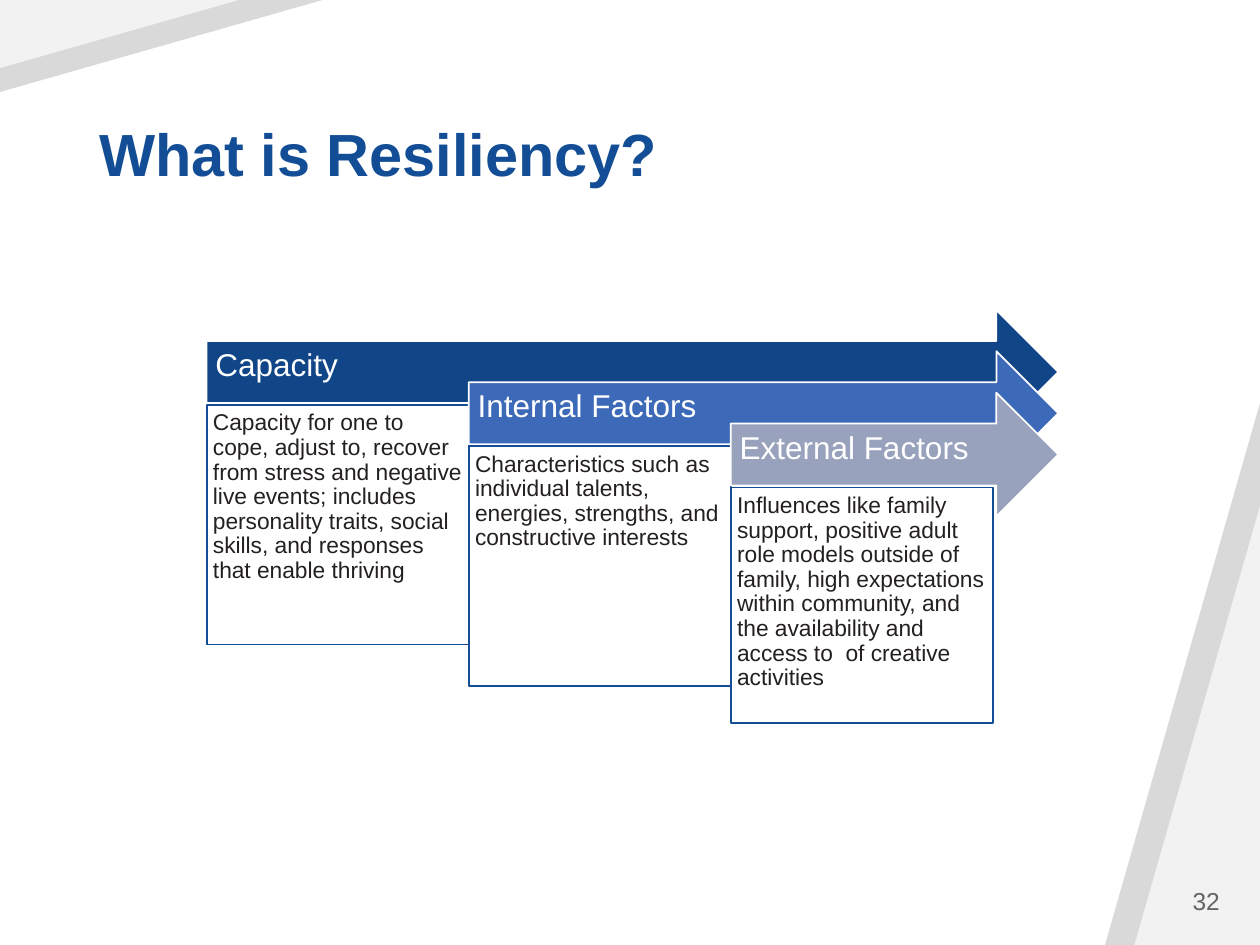
import pptx
import pptx.util
import pptx.dml.color
import pptx.enum.shapes
import pptx.enum.text

RGB = pptx.dml.color.RGBColor
KIND = pptx.enum.shapes.MSO_SHAPE
ALIGN = pptx.enum.text.PP_ALIGN
ANCHOR = pptx.enum.text.MSO_ANCHOR

WHITE = RGB(0xFF, 0xFF, 0xFF)
PALE = RGB(0xF2, 0xF2, 0xF2)
SILVER = RGB(0xD9, 0xD9, 0xD9)
GREY = RGB(0x64, 0x64, 0x64)
INK = RGB(0x24, 0x20, 0x21)
BLUE = RGB(0x12, 0x4D, 0x95)
NAVY = RGB(0x10, 0x46, 0x87)
ROYAL = RGB(0x3D, 0x69, 0xB9)
MIST = RGB(0x98, 0xA2, 0xBD)

WIDTH = pptx.util.Inches(10)
HEIGHT = pptx.util.Inches(7.5)
COL = WIDTH / 100
ROW = HEIGHT / 100

STEPS = [
    ("Capacity", NAVY,
     "Capacity for one to cope, adjust to, recover from stress and negative "
     "live events; includes personality traits, social skills, and responses "
     "that enable thriving"),
    ("Internal Factors", ROYAL,
     "Characteristics such as individual talents, energies, strengths, and "
     "constructive interests"),
    ("External Factors", MIST,
     "Influences like family support, positive adult role models outside of "
     "family, high expectations within community, and the availability and "
     "access to  of creative activities"),
]


def grid(left, top, wide, high):
    return [round(n) for n in (left * COL, top * ROW, wide * COL, high * ROW)]


def write(shape, text, size=13, color=INK, bold=False, align=ALIGN.LEFT,
          anchor=ANCHOR.TOP, space=0.9, inset=(0.1, 0.05, 0.1, 0.05)):
    frame = shape.text_frame
    frame.word_wrap = True
    frame.vertical_anchor = anchor
    (frame.margin_left, frame.margin_top,
     frame.margin_right, frame.margin_bottom) = map(pptx.util.Inches, inset)
    line = frame.paragraphs[0]
    line.alignment = align
    line.line_spacing = space
    run = line.add_run()
    run.text = text
    run.font.name = "Arial"
    run.font.size = pptx.util.Pt(size)
    run.font.bold = bold
    run.font.color.rgb = color


def draw(slide, kind, box, fill, edge=None):
    shape = slide.shapes.add_shape(kind, *map(round, box))
    shape.shadow.inherit = False
    shape.fill.solid()
    shape.fill.fore_color.rgb = fill
    if edge is None:
        shape.line.fill.background()
    else:
        shape.line.color.rgb = edge
        shape.line.width = pptx.util.Pt(1)
    return shape


def corner(slide, box, turn, inner):
    left, top, wide, high = box
    small = wide * inner, high * inner
    if turn:
        inside = left, top, *small
    else:
        inside = left + wide - small[0], top + high - small[1], *small
    for area, fill in ((box, SILVER), (inside, PALE)):
        shape = draw(slide, KIND.ISOSCELES_TRIANGLE, area, fill)
        shape.adjustments[0] = 1
        shape.rotation = turn


def label(slide, box, text, **style):
    write(slide.shapes.add_textbox(*box), text, **style)


def stairs(slide, box):
    left, top, wide, high = box
    col, row = wide / 3.25, high / 10
    for i, (name, fill, text) in enumerate(STEPS):
        x, y = left + i * col, top + i * row
        arrow = draw(slide, KIND.RIGHT_ARROW,
                     (x, y, wide - i * col, 3 * row), fill, WHITE)
        write(arrow, name, size=18, color=WHITE, anchor=ANCHOR.MIDDLE,
              inset=(0.07, 0.07, 0.28, 0.16))
        tall = min(5.8, 7.7 - i) * row
        card = draw(slide, KIND.RECTANGLE,
                    (x, y + 2.3 * row, col, tall), WHITE, BLUE)
        write(card, text, inset=(0.05,) * 4)


def main():
    deck = pptx.Presentation()
    deck.slide_width, deck.slide_height = WIDTH, HEIGHT
    slide = deck.slides.add_slide(deck.slide_layouts[6])
    corner(slide, grid(87.7, 42.67, 12.3, 57.33), 0, 0.81)
    corner(slide, grid(0, 0, 25.6, 9.73), 180, 0.74)
    label(slide, grid(6.9, 5.33, 87, 15.33), "What is Resiliency?",
          size=34, color=BLUE, bold=True, anchor=ANCHOR.BOTTOM)
    stairs(slide, grid(16.4, 32.8, 67.6, 43.73))
    label(slide, grid(89.6, 92.67, 8.2, 5.33), "32", size=14, color=GREY,
          align=ALIGN.RIGHT, anchor=ANCHOR.MIDDLE, space=1)
    deck.save("out.pptx")


if __name__ == "__main__":
    main()
